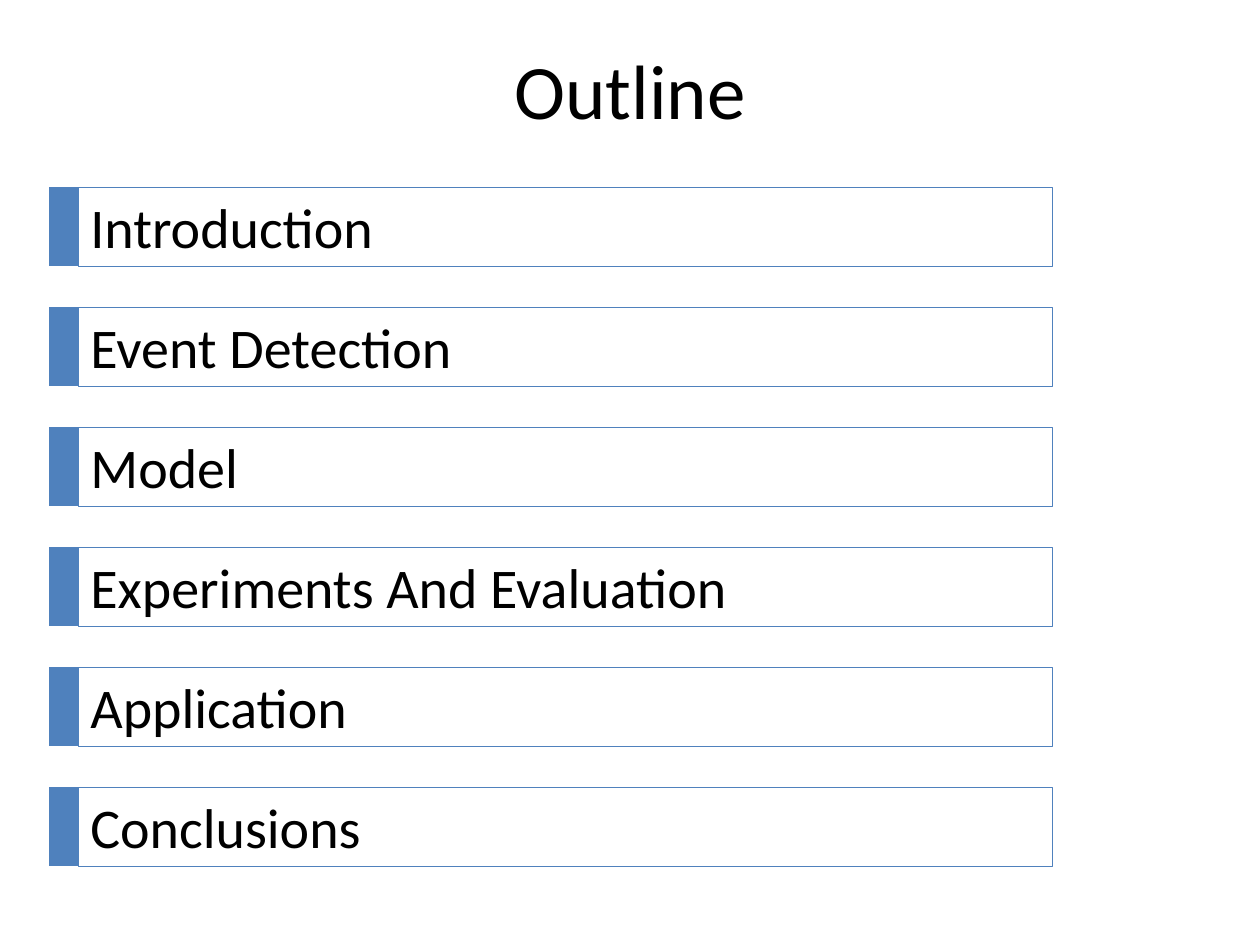
from pptx import Presentation, util as u
from pptx.dml.color import RGBColor
from pptx.enum import shapes, text

TITLE = "Outline"
SECTIONS = ["Introduction", "Event Detection", "Model",
            "Experiments And Evaluation", "Application", "Conclusions"]

COLORS = {"accent": "4F81BD", "text": "000000"}
FONT = "Calibri"
EMU_PER_PX = 914400 / 126

TITLE_BOX = (63, 21, 1134, 136)
TAB_LEFT, TAB_WIDTH = 49, 29
BAR_WIDTH, ROW_HEIGHT = 975, 79
FIRST_TOP, ROW_PITCH = 187, 120


def px(n):
    return u.Emu(round(n * EMU_PER_PX))


def color(name):
    return RGBColor.from_string(COLORS[name])


def write(frame, words, size, align):
    frame.text = words
    frame.word_wrap = True
    frame.vertical_anchor = text.MSO_ANCHOR.MIDDLE
    paragraph = frame.paragraphs[0]
    paragraph.alignment = align
    font = paragraph.runs[0].font
    for key, value in {"name": FONT, "size": u.Pt(size)}.items():
        setattr(font, key, value)
    font.color.rgb = color("text")


def add_box(slide, *box):
    box_shape = slide.shapes.add_shape(shapes.MSO_SHAPE.RECTANGLE, *map(px, box))
    box_shape.shadow.inherit = False
    return box_shape


def add_section(slide, words, top):
    bar = add_box(slide, TAB_LEFT + TAB_WIDTH, top, BAR_WIDTH, ROW_HEIGHT)
    bar.fill.background()
    bar.line.color.rgb = color("accent")
    bar.line.width = u.Pt(0.5)
    write(bar.text_frame, words, 32, text.PP_ALIGN.LEFT)

    tab = add_box(slide, TAB_LEFT, top, TAB_WIDTH, ROW_HEIGHT)
    tab.fill.solid()
    tab.fill.fore_color.rgb = color("accent")
    tab.line.fill.background()


def main():
    deck = Presentation()
    deck.slide_width, deck.slide_height = px(1260), px(945)
    slide = deck.slides.add_slide(deck.slide_layouts[5])

    title = slide.shapes.title
    title.left, title.top, title.width, title.height = map(px, TITLE_BOX)
    write(title.text_frame, TITLE, 44, text.PP_ALIGN.CENTER)

    for row, words in enumerate(SECTIONS):
        add_section(slide, words, FIRST_TOP + row * ROW_PITCH)

    deck.save("out.pptx")


if __name__ == "__main__":
    main()
